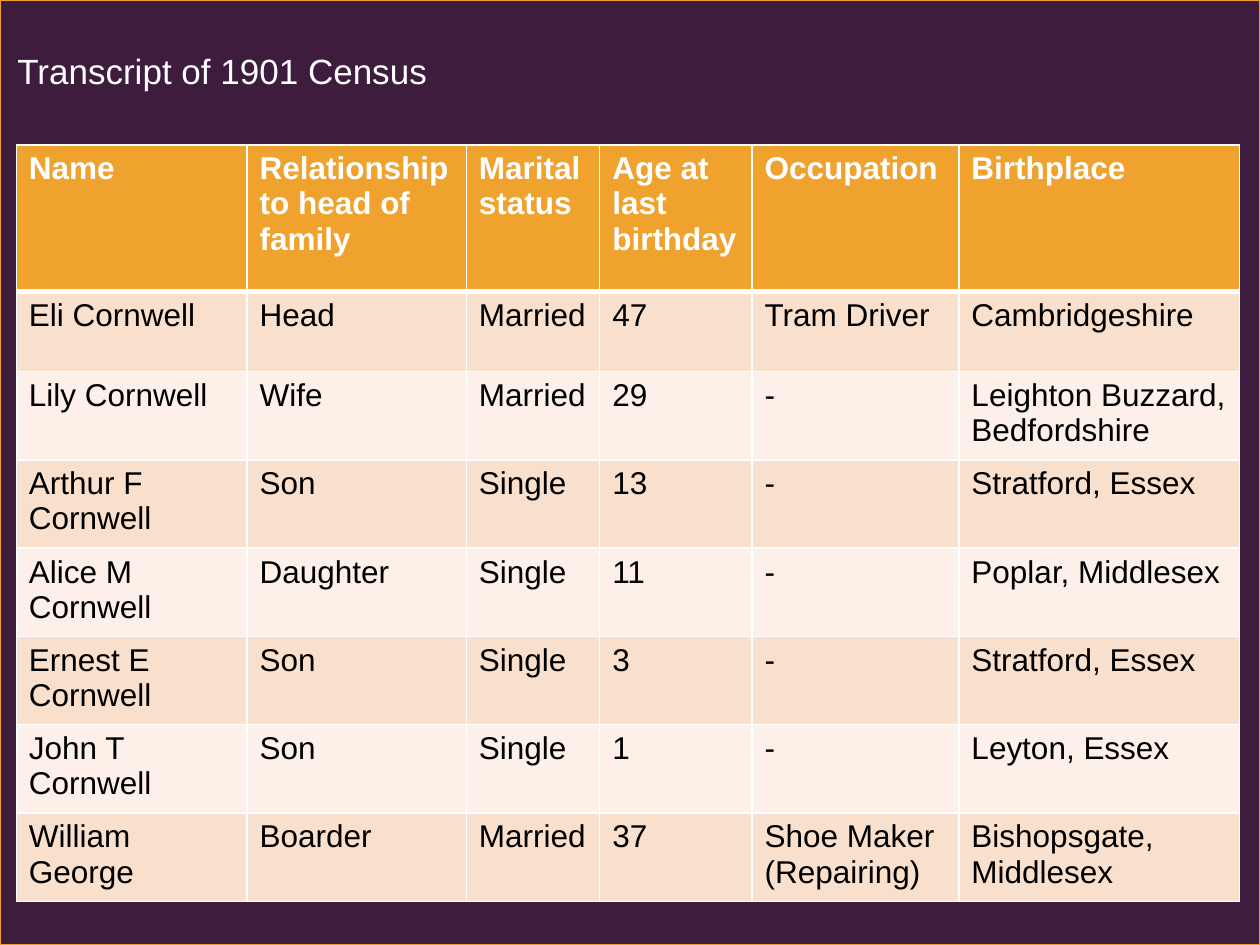
from lxml import etree
from pptx import Presentation
from pptx.dml.color import RGBColor
from pptx.enum import shapes, text
from pptx.oxml.ns import qn
from pptx.util import Cm, Pt

TITLE = "Transcript of 1901 Census"
HEADER = ("Name", "Relationship to head of family", "Marital status",
          "Age at last birthday", "Occupation", "Birthplace")
PEOPLE = [
    ("Eli Cornwell", "Head", "Married", "47", "Tram Driver", "Cambridgeshire"),
    ("Lily Cornwell", "Wife", "Married", "29", "-", "Leighton Buzzard, Bedfordshire"),
    ("Arthur F Cornwell", "Son", "Single", "13", "-", "Stratford, Essex"),
    ("Alice M Cornwell", "Daughter", "Single", "11", "-", "Poplar, Middlesex"),
    ("Ernest E Cornwell", "Son", "Single", "3", "-", "Stratford, Essex"),
    ("John T Cornwell", "Son", "Single", "1", "-", "Leyton, Essex"),
    ("William George", "Boarder", "Married", "37", "Shoe Maker (Repairing)",
     "Bishopsgate, Middlesex"),
]
COLUMN_WIDTHS = (4.65, 4.42, 2.69, 3.07, 4.17, 5.66)
HEADER_HEIGHT, FIRST_HEIGHT, ROW_HEIGHT = 2.95, 1.62, 1.78

PURPLE = RGBColor(0x3D, 0x1C, 0x3D)
EDGE = RGBColor(0xEF, 0x9F, 0x28)
ORANGE = RGBColor(0xF0, 0xA2, 0x2E)
PEACH = RGBColor(0xF9, 0xE0, 0xCD)
CREAM = RGBColor(0xFC, 0xF0, 0xE8)
WHITE = RGBColor(0xFF, 0xFF, 0xFF)
BLACK = RGBColor(0x00, 0x00, 0x00)


def write(tf, content, size, color, bold=False):
    r = tf.paragraphs[0].add_run()
    r.text = content
    for name, value in {"name": "Arial", "size": Pt(size), "bold": bold}.items():
        setattr(r.font, name, value)
    r.font.color.rgb = color


def add_borders(cell, bottom):
    tc_pr = cell._tc.get_or_add_tcPr()
    widths = {"a:lnL": 1, "a:lnR": 1, "a:lnT": 1, "a:lnB": bottom}
    for i, (tag, width) in enumerate(widths.items()):
        ln = etree.Element(qn(tag), w=str(Pt(width)))
        fill = etree.SubElement(ln, qn("a:solidFill"))
        etree.SubElement(fill, qn("a:srgbClr"), val=str(WHITE))
        tc_pr.insert(i, ln)


def add_background(s):
    sp = s.shapes.add_shape(shapes.MSO_SHAPE.RECTANGLE, 0, 0, Cm(25.4), Cm(19.05))
    sp.shadow.inherit = False
    sp.fill.solid()
    sp.fill.fore_color.rgb = PURPLE
    sp.line.color.rgb = EDGE
    sp.line.width = Pt(0.75)


def add_title(s):
    tf = s.shapes.add_textbox(Cm(0.1), Cm(0.1), Cm(8.84), Cm(3.45)).text_frame
    settings = {"word_wrap": False, "vertical_anchor": text.MSO_ANCHOR.TOP,
                "margin_left": Cm(0.25), "margin_top": Cm(0.9)}
    for name, value in settings.items():
        setattr(tf, name, value)
    write(tf, TITLE, 20, WHITE)


def add_census(s):
    rows = [HEADER] + PEOPLE
    heights = [HEADER_HEIGHT, FIRST_HEIGHT] + [ROW_HEIGHT] * (len(PEOPLE) - 1)
    table = s.shapes.add_table(len(rows), len(HEADER), Cm(0.33), Cm(2.92),
                               Cm(sum(COLUMN_WIDTHS)), Cm(sum(heights))).table
    for column, width in zip(table.columns, COLUMN_WIDTHS):
        column.width = Cm(width)
    for i, (row, height) in enumerate(zip(rows, heights)):
        table.rows[i].height = Cm(height)
        header = i == 0
        fill = ORANGE if header else PEACH if i % 2 else CREAM
        for j, content in enumerate(row):
            cell = table.cell(i, j)
            cell.fill.solid()
            cell.fill.fore_color.rgb = fill
            write(cell.text_frame, content, 18, WHITE if header else BLACK, header)
            add_borders(cell, 3 if header else 1)


def main():
    prs = Presentation()
    prs.slide_width, prs.slide_height = Cm(25.4), Cm(19.05)
    s = prs.slides.add_slide(prs.slide_layouts[6])
    add_background(s)
    add_title(s)
    add_census(s)
    prs.save("out.pptx")


if __name__ == "__main__":
    main()
